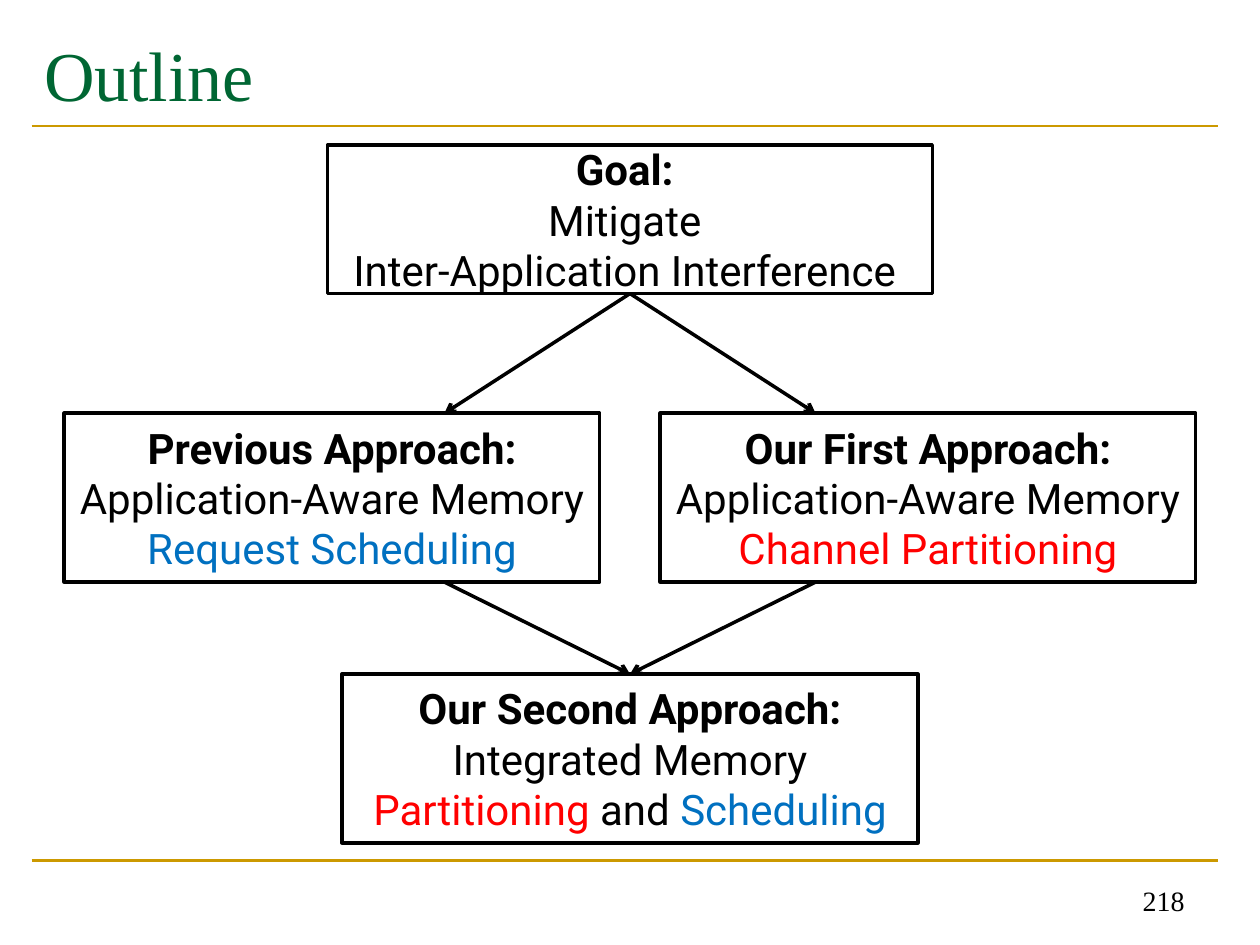
import collections
import dataclasses

import lxml.etree
import pptx
import pptx.dml.color
import pptx.enum.shapes
import pptx.enum.text
import pptx.oxml.ns
import pptx.util

Box = collections.namedtuple("Box", "left top width height")
COLUMNS, ROWS = 100, 75
UNIT = pptx.util.Inches(0.1)
ALIGN = pptx.enum.text.PP_ALIGN
ANCHOR = pptx.enum.text.MSO_ANCHOR
BOTTOM_SITE, TOP_SITE = 2, 0


@dataclasses.dataclass(frozen=True)
class Theme:
    """Hold the colours, fonts and sizes of the slide."""
    ink: str = "000000"
    title: str = "006633"
    rule: str = "CC9900"
    scheduling: str = "0070C0"
    partitioning: str = "FF0000"
    heading_font: str = "Times New Roman"
    body_font: str = "Roboto"
    title_size: int = 40
    body_size: int = 24
    number_size: int = 16
    rule_width: float = 1.5
    line_width: float = 2


THEME = Theme()


def grid(*lengths):
    """Turn grid units into slide lengths."""
    return [round(length * UNIT) for length in lengths]


def colour(value):
    """Return a colour from its hexadecimal value."""
    return pptx.dml.color.RGBColor.from_string(value)


def place(shape, box):
    """Move a shape to a box of the grid."""
    for name, length in zip(Box._fields, grid(*box)):
        setattr(shape, name, length)


def write(shape, paragraphs, font, size, align, anchor):
    """Fill a shape with paragraphs of (text, colour, bold) spans."""
    frame = shape.text_frame
    for name, value in {"word_wrap": True, "vertical_anchor": anchor,
                        "auto_size": pptx.enum.text.MSO_AUTO_SIZE.NONE}.items():
        setattr(frame, name, value)
    for index, spans in enumerate(paragraphs):
        para = frame.add_paragraph() if index else frame.paragraphs[0]
        para.alignment = align
        for text, ink, bold in spans:
            span = para.add_run()
            span.text = text
            formats = {"name": font, "size": pptx.util.Pt(size), "bold": bold}
            for name, value in formats.items():
                setattr(span.font, name, value)
            span.font.color.rgb = colour(ink)


def draw_line(page, start, end, ink, width, arrow=False):
    """Draw a straight line between two grid points."""
    line = page.shapes.add_connector(
        pptx.enum.shapes.MSO_CONNECTOR.STRAIGHT, *grid(*start, *end))
    line.line.color.rgb = colour(ink)
    line.line.width = pptx.util.Pt(width)
    if arrow:
        lxml.etree.SubElement(line.line._get_or_add_ln(),
                              pptx.oxml.ns.qn("a:tailEnd"), type="arrow")
    lxml.etree.SubElement(line._element.spPr, pptx.oxml.ns.qn("a:effectLst"))
    return line


def draw_frame(page, box):
    """Place the title, the two rules and the page number."""
    head, foot = box.top + 8.3, box.top + 66.6
    right = box.left + box.width
    for row in (head, foot):
        draw_line(page, (box.left, row), (right, row), THEME.rule, THEME.rule_width)
    title = page.shapes.title
    place(title, Box(box.left, box.top, box.width, head - box.top))
    write(title, [[("Outline", THEME.title, False)]], THEME.heading_font,
          THEME.title_size, ALIGN.LEFT, ANCHOR.MIDDLE)
    number = page.shapes.add_textbox(*grid(right - 25, foot, 23.3, 5))
    write(number, [[("218", THEME.ink, False)]], THEME.heading_font,
          THEME.number_size, ALIGN.RIGHT, ANCHOR.BOTTOM)


def draw_card(page, box, paragraphs):
    """Draw one outlined box with centred text."""
    card = page.shapes.add_shape(pptx.enum.shapes.MSO_SHAPE.RECTANGLE, *grid(*box))
    card.shadow.inherit = False
    card.fill.background()
    card.line.color.rgb = colour(THEME.ink)
    card.line.width = pptx.util.Pt(THEME.line_width)
    write(card, paragraphs, THEME.body_font, THEME.body_size,
          ALIGN.CENTER, ANCHOR.MIDDLE)
    return card


def draw_flow(page, box):
    """Draw the goal, the two approaches and their combination."""
    middle = box.left + box.width / 2
    upper, lower = box.top + 21.3, box.top + 42
    height, width = 13.4, 42.5
    goal_box = Box(middle - 24, box.top, 48, 11.8)
    second_box = Box(middle - 22.85, lower, 45.7, height)

    goal = draw_card(page, goal_box, [
        [("Goal: ", THEME.ink, True)],
        [("Mitigate ", THEME.ink, False)],
        [("Inter-Application Interference ", THEME.ink, False)]])
    second = draw_card(page, second_box, [[
        ("Our Second Approach:", THEME.ink, True),
        (" Integrated Memory ", THEME.ink, False),
        ("Partitioning", THEME.partitioning, False),
        (" and ", THEME.ink, False),
        ("Scheduling", THEME.scheduling, False)]])

    approaches = [
        (box.left, 0.71, "Previous Approach:", "Request Scheduling", THEME.scheduling),
        (box.left + box.width - width, 0.29, "Our First Approach:",
         "Channel Partitioning", THEME.partitioning)]
    for left, share, heading, method, ink in approaches:
        draw_card(page, Box(left, upper, width, height), [
            [(heading, THEME.ink, True)],
            [("Application-Aware Memory ", THEME.ink, False), (method, ink, False)]])
        joint = left + share * width
        arrow = {"ink": THEME.ink, "width": THEME.line_width, "arrow": True}
        inward = draw_line(page, (middle, box.top + goal_box.height),
                           (joint, upper), **arrow)
        inward.begin_connect(goal, BOTTOM_SITE)
        outward = draw_line(page, (joint, upper + height), (middle, lower), **arrow)
        outward.end_connect(second, TOP_SITE)


def main():
    """Build and save the slide."""
    deck = pptx.Presentation()
    deck.slide_width, deck.slide_height = grid(COLUMNS, ROWS)
    page = deck.slides.add_slide(deck.slide_layouts.get_by_name("Title Only"))
    draw_frame(page, Box(2.5, 1.7, 94.2, 71.6))
    draw_flow(page, Box(5.1, 11.5, 89.8, 55.4))
    deck.save("out.pptx")


if __name__ == "__main__":
    main()
